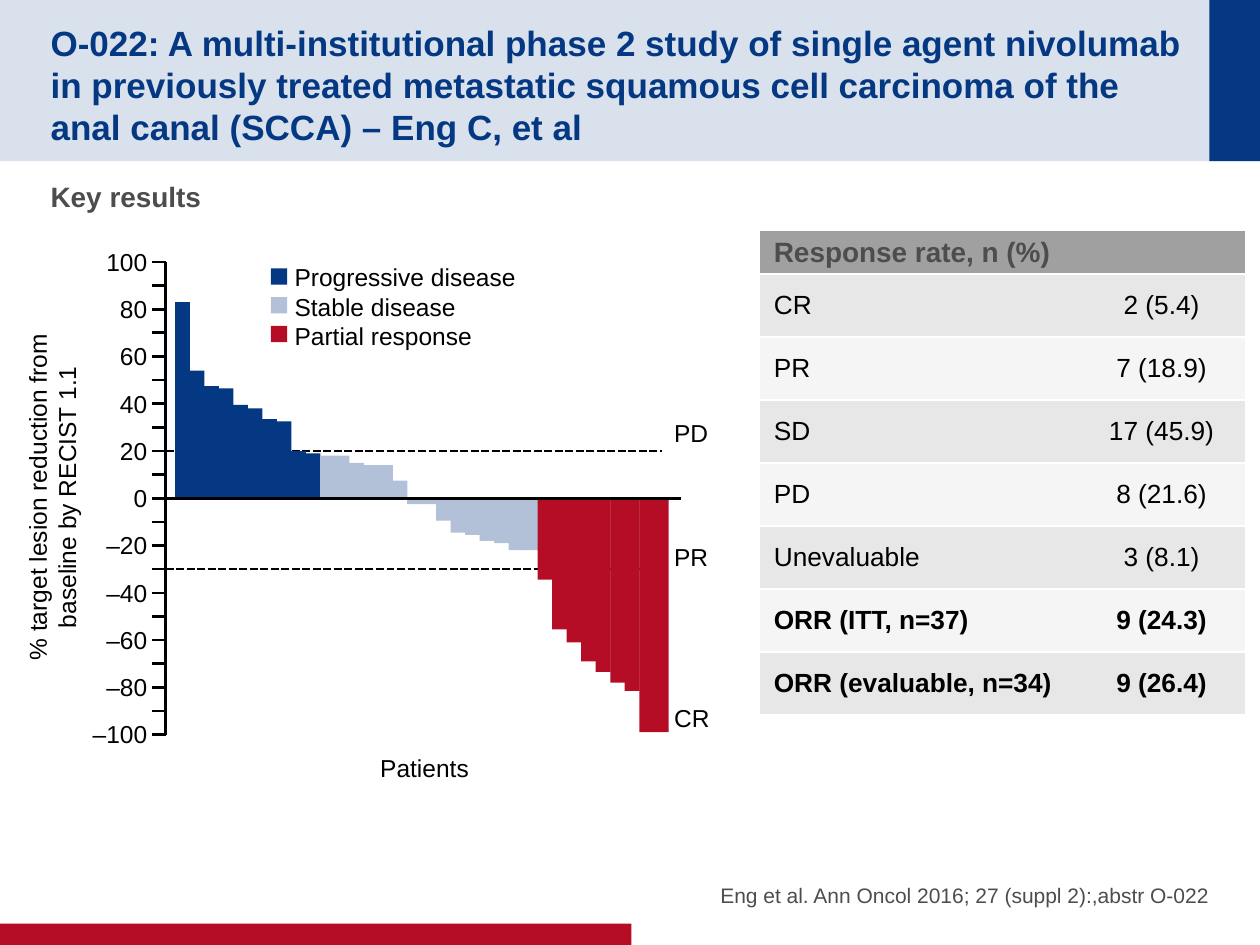
from lxml.etree import SubElement
from pptx import Presentation
from pptx.dml.color import RGBColor
from pptx.enum.dml import MSO_LINE as Dash
from pptx.enum.shapes import MSO_CONNECTOR as Connector, MSO_SHAPE as Shape
from pptx.enum.text import MSO_ANCHOR as Anchor, MSO_AUTO_SIZE as AutoSize, PP_ALIGN as Align
from pptx.oxml import parse_xml
from pptx.oxml.ns import nsdecls, qn
from pptx.util import Cm, Pt

NAVY = RGBColor(0x04, 0x38, 0x82)
PALE_NAVY = RGBColor(0xD9, 0xE1, 0xEC)
LIGHT_BLUE = RGBColor(0xB2, 0xC0, 0xD8)
RED = RGBColor(0xB6, 0x0D, 0x27)
BLACK = RGBColor(0x00, 0x00, 0x00)
DARK_GREY = RGBColor(0x4D, 0x4D, 0x4D)
HEADER_GREY = RGBColor(0xA0, 0xA0, 0xA0)
BAND_GREY = RGBColor(0xE7, 0xE7, 0xE7)
PALE_GREY = RGBColor(0xF5, 0xF5, 0xF5)

deck = Presentation()
deck.slide_width, deck.slide_height = Cm(25.4), Cm(19.05)
page = deck.slides.add_slide(deck.slide_layouts[3])
shapes = page.shapes


def add_block(left, top, width, height, color):
    block = shapes.add_shape(Shape.RECTANGLE, Cm(left), Cm(top), Cm(width), Cm(height))
    block.shadow.inherit = False
    block.fill.solid()
    block.fill.fore_color.rgb = color
    block.line.fill.background()
    return block


def add_stroke(left, top, right, bottom, dash=None):
    stroke = shapes.add_connector(Connector.STRAIGHT, Cm(left), Cm(top), Cm(right), Cm(bottom))
    SubElement(stroke._element.spPr, qn("a:effectLst"))
    stroke.line.color.rgb = BLACK
    stroke.line.width = Pt(1.5)
    if dash:
        stroke.line.dash_style = dash


bands = [
    (0, 0, 25.4, 3.25, PALE_NAVY),
    (24.38, 0, 1.02, 3.25, NAVY),
    (0, 18.62, 12.73, 0.43, RED),
]
for position, band in enumerate(bands, start=2):
    shapes._spTree.insert(position, add_block(*band)._element)

title, heading, citation = page.placeholders
headings = [
    (title, "O-022: A multi-institutional phase 2 study of single agent nivolumab in previously "
     "treated metastatic squamous cell carcinoma of the anal canal (SCCA) – Eng C, et al",
     (1.02, 0.51, 22.89, 2.24), 20, NAVY, True, Align.LEFT, Anchor.MIDDLE, 0.13),
    (heading, "Key results",
     (1.02, 3.48, 23.37, 13.21), 16, DARK_GREY, True, Align.LEFT, Anchor.TOP, 0.13),
    (citation, "Eng et al. Ann Oncol 2016; 27 (suppl 2):,abstr O-022",
     (12.9, 16.94, 11.48, 1.35), 12, DARK_GREY, False, Align.RIGHT, Anchor.BOTTOM, 0),
]
for box, text, place, size, color, bold, align, anchor, inset in headings:
    box.left, box.top, box.width, box.height = map(Cm, place)
    frame = box.text_frame
    frame.text = text
    frame.auto_size = AutoSize.NONE
    frame.vertical_anchor = anchor
    frame.margin_left = frame.margin_right = frame.margin_bottom = 0
    frame.margin_top = Cm(inset)
    para = frame.paragraphs[0]
    para.alignment = align
    para.space_before = Pt(0)
    para.space_after = Pt(0 if box is title else 4)
    properties = para._p.get_or_add_pPr()
    properties.set("marL", "0")
    properties.set("indent", "0")
    SubElement(properties, qn("a:buNone"))
    font = para.runs[0].font
    font.name, font.size, font.bold = "Arial", Pt(size), bold
    font.color.rgb = color

axis_x, axis_top, axis_bottom = 3.34, 5.28, 14.81
zero_y = (axis_top + axis_bottom) / 2
unit = (axis_bottom - axis_top) / 200

for threshold in (20, -30):
    level = zero_y - threshold * unit
    add_stroke(axis_x, level, 13.34, level, Dash.SQUARE_DOT)

responses = [
    ("Progressive disease", NAVY, [83, 54, 47.5, 46.5, 39.5, 38, 33.5, 32.5, 20, 19]),
    ("Stable disease", LIGHT_BLUE,
     [18, 18, 15, 14, 14, 7.5, -2.5, -2.5, -9.5, -14.5, -15.5, -18, -19, -22, -22]),
    ("Partial response", RED, [-34.5, -55.5, -61, -69, -73.5, -78, -81.5, -99, -99]),
]
first_bar, last_bar = 3.53, 13.18
bar_pitch = (last_bar - first_bar) / (sum(len(values) for _, _, values in responses) - 1)
bar_left = first_bar
for row, (name, color, values) in enumerate(responses):
    add_block(5.46, 5.41 + 0.58 * row, 0.33, 0.33, color)
    for value in values:
        add_block(bar_left, zero_y - max(value, 0) * unit, 0.3, abs(value) * unit, color)
        bar_left += bar_pitch

add_stroke(axis_x, axis_top, axis_x, axis_bottom)
add_stroke(axis_x, zero_y, 13.72, zero_y)
for tick in range(-100, 101, 10):
    level = zero_y - tick * unit
    add_stroke(3.07, level, axis_x, level)

labels = [
    (str(tick).replace("-", "–"), 1.22, zero_y - tick * unit - 0.43, 2, 0.86, Align.RIGHT, 0)
    for tick in range(-100, 101, 20)
]
labels += [
    ("% target lesion reduction from baseline by RECIST 1.1", -2.67, 9.3, 7.44, 1.45, Align.CENTER, 270),
    ("\n".join(name for name, _, _ in responses), 5.69, 5.16, 5.2, 2.06, Align.LEFT, 0),
    ("PD", 13.34, 8.31, 1.3, 0.86, Align.LEFT, 0),
    ("PR", 13.34, 10.8, 1.3, 0.86, Align.LEFT, 0),
    ("CR", 13.34, 14.05, 1.3, 0.86, Align.LEFT, 0),
    ("Patients", 5.46, 15.06, 6.2, 0.86, Align.CENTER, 0),
]
for text, left, top, width, height, align, rotation in labels:
    box = shapes.add_textbox(Cm(left), Cm(top), Cm(width), Cm(height))
    box.rotation = rotation
    box.text_frame.word_wrap = True
    box.text_frame.text = text
    for para in box.text_frame.paragraphs:
        para.alignment = align
        font = para.runs[0].font
        font.name, font.size = "Arial", Pt(14)
        font.color.rgb = BLACK

rates = [
    ("Response rate, n (%)", ""),
    ("CR", "2 (5.4)"),
    ("PR", "7 (18.9)"),
    ("SD", "17 (45.9)"),
    ("PD", "8 (21.6)"),
    ("Unevaluable", "3 (8.1)"),
    ("ORR (ITT, n=37)", "9 (24.3)"),
    ("ORR (evaluable, n=34)", "9 (26.4)"),
]
table = shapes.add_table(len(rates), 2, Cm(15.32), Cm(4.65), Cm(9.77), Cm(9.75)).table
table.columns[0].width, table.columns[1].width = Cm(6.42), Cm(3.35)
for row, texts in enumerate(rates):
    is_header = row == 0
    table.rows[row].height = Cm(0.86 if is_header else 1.27)
    for column, text in enumerate(texts):
        cell = table.cell(row, column)
        cell.text = text
        cell.vertical_anchor = Anchor.MIDDLE
        cell.margin_left = cell.margin_right = Cm(0.28)
        cell.margin_top = cell.margin_bottom = Cm(0.1)
        for side in ("lnL", "lnR"):
            cell._tc.get_or_add_tcPr().append(parse_xml(
                f'<a:{side} {nsdecls("a")} w="0"><a:noFill/></a:{side}>'))
        for side in ("lnT", "lnB"):
            cell._tc.get_or_add_tcPr().append(parse_xml(
                f'<a:{side} {nsdecls("a")} w="12700"><a:solidFill>'
                f'<a:srgbClr val="FFFFFF"/></a:solidFill></a:{side}>'))
        cell.fill.solid()
        cell.fill.fore_color.rgb = HEADER_GREY if is_header else (PALE_GREY, BAND_GREY)[row % 2]
        para = cell.text_frame.paragraphs[0]
        para.alignment = Align.CENTER if column else Align.LEFT
        for span in para.runs:
            span.font.name = "Arial"
            span.font.size = Pt(16 if is_header else 15)
            span.font.bold = is_header or text.startswith("ORR") or texts[0].startswith("ORR")
            span.font.color.rgb = DARK_GREY if is_header else BLACK
table.cell(0, 0).merge(table.cell(0, 1))

deck.save("out.pptx")
